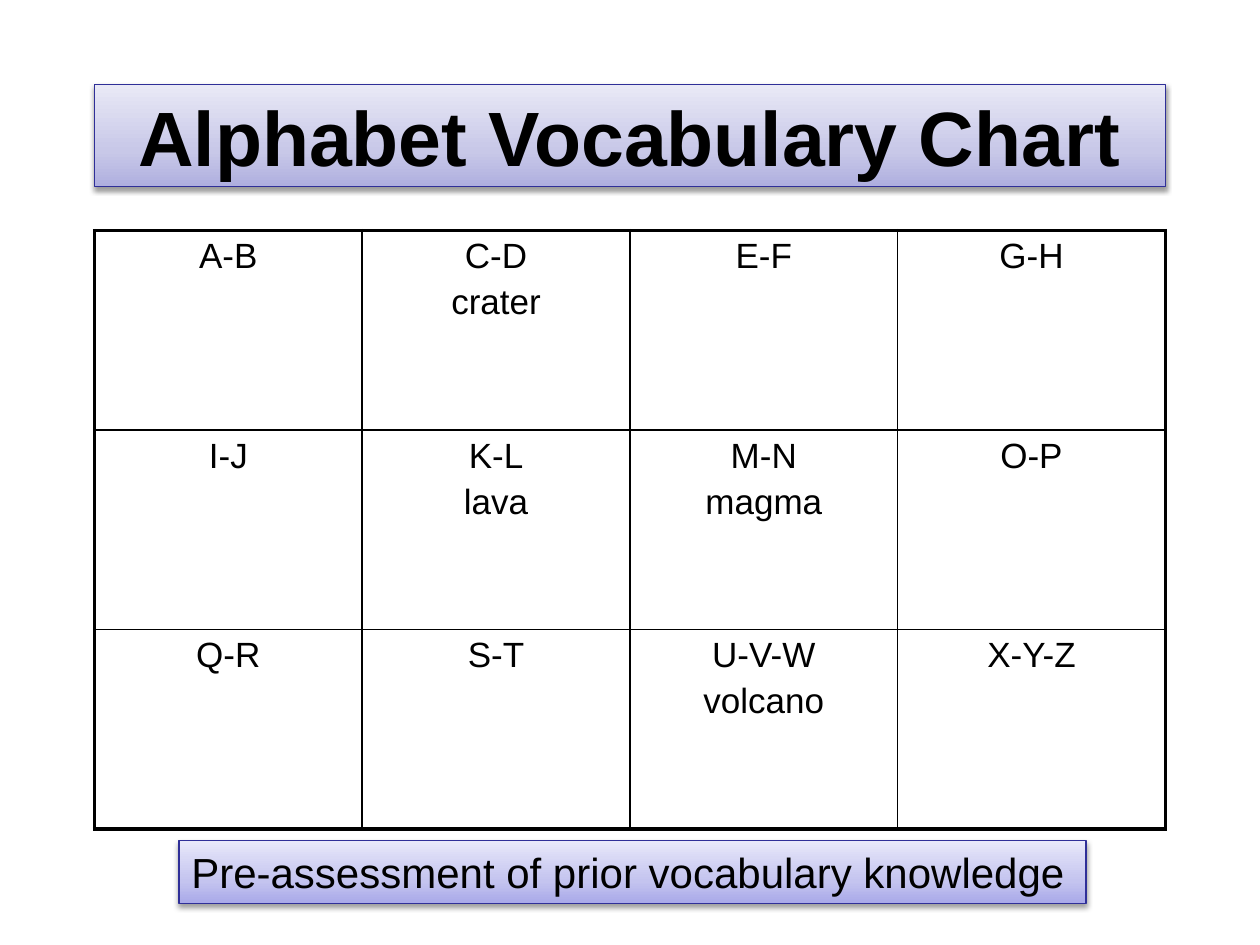
from lxml import etree
from pptx import Presentation
from pptx.dml.color import RGBColor
from pptx.enum.shapes import MSO_SHAPE
from pptx.enum.text import MSO_ANCHOR, MSO_AUTO_SIZE, PP_ALIGN
from pptx.oxml import parse_xml
from pptx.oxml.ns import nsdecls, qn
from pptx.util import Inches, Pt

RECTANGLE = MSO_SHAPE.RECTANGLE
TOP, MIDDLE = MSO_ANCHOR.TOP, MSO_ANCHOR.MIDDLE
LEFT, CENTER = PP_ALIGN.LEFT, PP_ALIGN.CENTER
FIT_SHAPE = MSO_AUTO_SIZE.SHAPE_TO_FIT_TEXT

FONT = "Arial"
BLACK = "000000"
BANNER_LINE = "2F2F98"
TITLE_STOPS = [(0, "AFAFDF"), (35, "C8C8E8"), (100, "E9E9F6")]
CAPTION_STOPS = [(0, "A9A9E9"), (35, "C4C4EF"), (100, "E8E8FA")]
OUTER_BORDER, INNER_BORDER = 2.25, 1

VOCABULARY = [
    [["A-B"], ["C-D", "crater"], ["E-F"], ["G-H"]],
    [["I-J"], ["K-L", "lava"], ["M-N", "magma"], ["O-P"]],
    [["Q-R"], ["S-T"], ["U-V-W", "volcano"], ["X-Y-Z"]],
]


def color(value):
    """Return the colour for a hex string."""
    return RGBColor.from_string(value)


def style_paragraph(paragraph, size, alignment, bold=False):
    """Set the font and alignment of a paragraph."""
    paragraph.alignment = alignment
    paragraph.font.name = FONT
    paragraph.font.size = Pt(size)
    paragraph.font.bold = bold
    paragraph.font.color.rgb = color(BLACK)


def set_gradient(shape, stops):
    """Fill a shape with a gradient that runs from bottom to top."""
    stop_xml = "".join(
        f'<a:gs pos="{position * 1000}"><a:srgbClr val="{value}"/></a:gs>'
        for position, value in stops
    )
    gradient = parse_xml(
        f'<a:gradFill {nsdecls("a")} rotWithShape="1"><a:gsLst>{stop_xml}</a:gsLst>'
        '<a:lin ang="16200000" scaled="0"/></a:gradFill>'
    )
    shape._element.spPr.find(qn("a:prstGeom")).addnext(gradient)


def set_shadow(shape):
    """Give a shape a soft shadow below it."""
    shape.shadow.inherit = False
    effects = shape._element.spPr.find(qn("a:effectLst"))
    effects.append(parse_xml(
        f'<a:outerShdw {nsdecls("a")} blurRad="{Pt(3.1)}" dist="{Pt(1.6)}" '
        f'dir="5400000" rotWithShape="0"><a:srgbClr val="{BLACK}">'
        '<a:alpha val="38000"/></a:srgbClr></a:outerShdw>'
    ))


def add_banner(slide, box, text, size, stops, alignment, anchor, bold=False):
    """Add a shaded rectangle holding one line of text."""
    shape = slide.shapes.add_shape(RECTANGLE, *map(Inches, box))
    set_gradient(shape, stops)
    shape.line.color.rgb = color(BANNER_LINE)
    shape.line.width = Pt(0.75)
    set_shadow(shape)
    frame = shape.text_frame
    frame.vertical_anchor = anchor
    frame.text = text
    style_paragraph(frame.paragraphs[0], size, alignment, bold)
    return shape


def set_borders(cell, widths):
    """Draw the cell borders, given a width in points for each side."""
    properties = cell._tc.get_or_add_tcPr()
    for side, width in widths.items():
        line = etree.SubElement(properties, qn(f"a:ln{side}"), w=str(Pt(width)))
        fill = etree.SubElement(line, qn("a:solidFill"))
        etree.SubElement(fill, qn("a:srgbClr"), val=BLACK)


def fill_cell(cell, lines):
    """Write the lines of a cell as centred paragraphs."""
    cell.fill.background()
    cell.text = "\n".join(lines)
    for paragraph in cell.text_frame.paragraphs:
        style_paragraph(paragraph, 20, CENTER)
        paragraph.space_before = Pt(4)


def add_vocabulary_table(slide, box, rows):
    """Add the alphabet grid with a heavy outer frame."""
    row_count, column_count = len(rows), len(rows[0])
    table = slide.shapes.add_table(row_count, column_count, *map(Inches, box)).table
    table.first_row = table.horz_banding = False
    for row_index, row in enumerate(rows):
        for column_index, lines in enumerate(row):
            cell = table.cell(row_index, column_index)
            on_edge = {
                "L": column_index == 0,
                "R": column_index == column_count - 1,
                "T": row_index == 0,
                "B": row_index == row_count - 1,
            }
            set_borders(cell, {
                side: OUTER_BORDER if outer else INNER_BORDER
                for side, outer in on_edge.items()
            })
            fill_cell(cell, lines)


def main():
    """Build the vocabulary slide and save it."""
    presentation = Presentation()
    presentation.slide_width, presentation.slide_height = Inches(10), Inches(7.5)
    slide = presentation.slides.add_slide(presentation.slide_layouts[6])
    add_banner(slide, (0.75, 0.67, 8.5, 0.81), "Alphabet Vocabulary Chart",
               44, TITLE_STOPS, CENTER, MIDDLE, bold=True)
    add_vocabulary_table(slide, (0.75, 1.83, 8.5, 4.75), VOCABULARY)
    caption = add_banner(slide, (1.42, 6.67, 7.2, 0.5),
                         "Pre-assessment of prior vocabulary knowledge",
                         24, CAPTION_STOPS, LEFT, TOP)
    caption.text_frame.word_wrap = False
    caption.text_frame.auto_size = FIT_SHAPE
    presentation.save("out.pptx")


if __name__ == "__main__":
    main()
